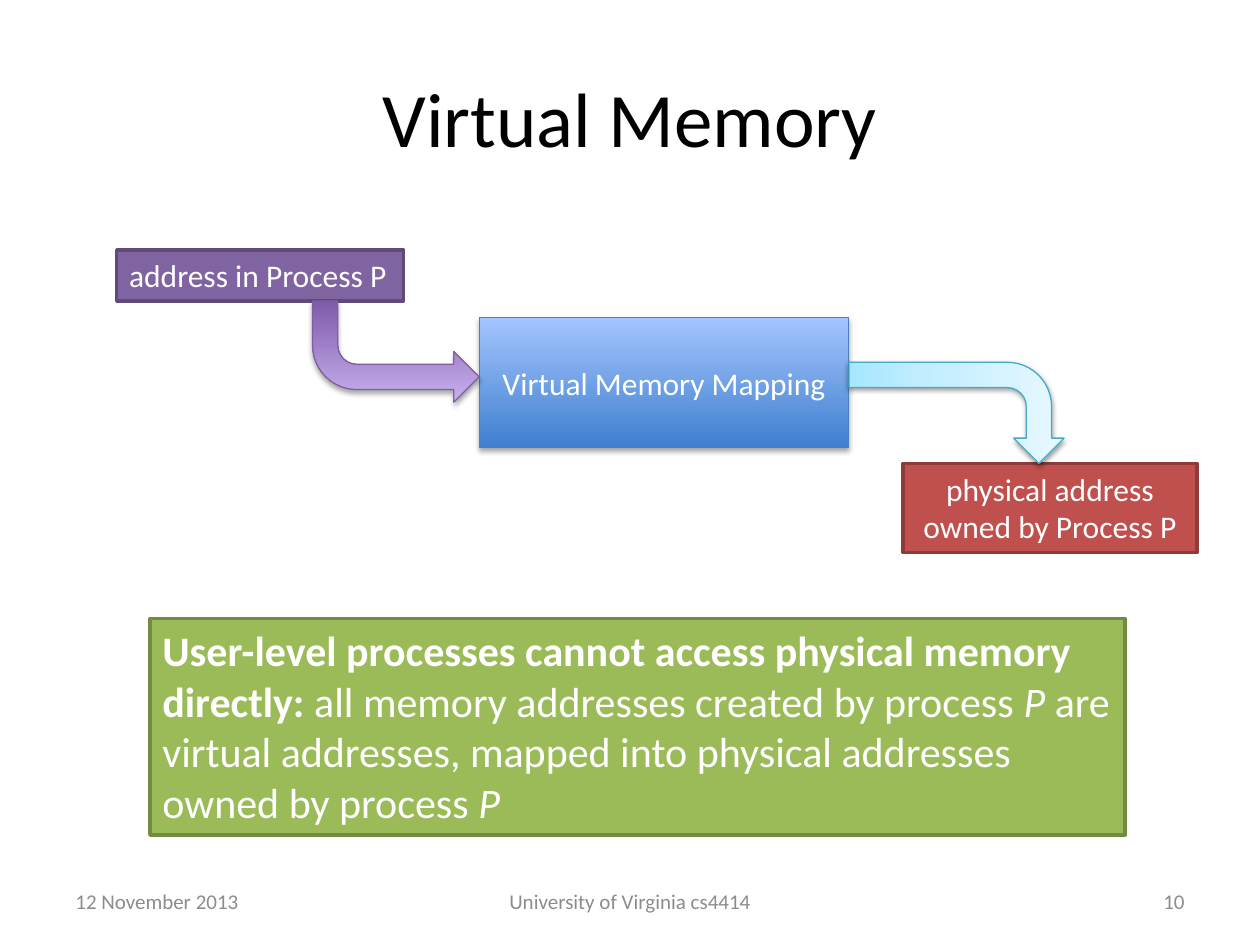
"""Build the Virtual Memory slide."""
from lxml import etree
from pptx import Presentation, util as u
from pptx.dml.color import RGBColor
from pptx.enum import shapes, text
from pptx.oxml.ns import qn

Pt = u.Pt
KIND = shapes.MSO_SHAPE
ALIGN = text.PP_ALIGN
ANCHOR = text.MSO_ANCHOR
FIT = text.MSO_AUTO_SIZE

BLACK = RGBColor(0x00, 0x00, 0x00)
WHITE = RGBColor(0xFF, 0xFF, 0xFF)
GRAY = RGBColor(0x8C, 0x8C, 0x8C)
PURPLE = RGBColor(0x80, 0x64, 0xA2)
PLUM = RGBColor(0x5F, 0x4A, 0x78)
RED = RGBColor(0xC0, 0x50, 0x4D)
BRICK = RGBColor(0x8E, 0x3B, 0x39)
GREEN = RGBColor(0x9B, 0xBB, 0x59)
OLIVE = RGBColor(0x73, 0x8A, 0x42)
BLUE = RGBColor(0x4B, 0x7E, 0xBC)
VIOLET = RGBColor(0x7D, 0x60, 0xA0)
TEAL = RGBColor(0x46, 0xAA, 0xC5)
BLUES = [(0, RGBColor(0x3F, 0x80, 0xCE)), (100, RGBColor(0xA4, 0xC4, 0xFF))]
LILACS = [(0, RGBColor(0x7F, 0x5B, 0xAB)), (100, RGBColor(0xC8, 0xB0, 0xED))]
AQUAS = [(0, RGBColor(0xA7, 0xE6, 0xFF)), (35, RGBColor(0xC1, 0xED, 0xFF)),
         (100, RGBColor(0xE7, 0xF8, 0xFF))]


def write(shape, runs, size=18, color=WHITE, align=ALIGN.LEFT,
          anchor=ANCHOR.TOP, wrap=True, fit=FIT.NONE):
    """Fill a shape with one paragraph of (words, style) runs."""
    frame = shape.text_frame
    frame.word_wrap = wrap
    frame.auto_size = fit
    frame.vertical_anchor = anchor
    para = frame.paragraphs[0]
    para.alignment = align
    for words, style in [(runs, "")] if isinstance(runs, str) else runs:
        run = para.add_run()
        run.text = words
        font = run.font
        font.name, font.size = "Calibri", Pt(size)
        font.color.rgb = color
        font.bold, font.italic = style == "bold", style == "italic"


def tint(parent, color, alpha=100):
    """Add an RGB colour with its opacity in percent."""
    node = etree.SubElement(parent, qn("a:srgbClr"), val=str(color))
    if alpha < 100:
        etree.SubElement(node, qn("a:alpha"), val=str(alpha * 1000))


def draw(slide, kind, area, fill, edge, width=2):
    """Add a flat outlined shape."""
    shape = slide.shapes.add_shape(kind, *map(Pt, area))
    shape.shadow.inherit = False
    if isinstance(fill, RGBColor):
        shape.fill.solid()
        shape.fill.fore_color.rgb = fill
    else:
        blend(shape, fill)
    shape.line.color.rgb = edge
    shape.line.width = Pt(width)
    return shape


def blend(shape, stops):
    """Fill a shape with a gradient running upwards."""
    shape.fill.gradient()
    shape.fill.gradient_angle = 90
    ramp = shape._element.spPr.find(".//" + qn("a:gsLst"))
    for stop in list(ramp):
        ramp.remove(stop)
    for place, color in stops:
        tint(etree.SubElement(ramp, qn("a:gs"), pos=str(place * 1000)), color)


def shade(shape, alpha=35, gap=1.8):
    """Drop a soft shadow straight below a shape."""
    effects = shape._element.spPr.find(qn("a:effectLst"))
    drop = etree.SubElement(effects, qn("a:outerShdw"), blurRad=str(Pt(3.1)),
                            dist=str(Pt(gap)), dir="5400000", rotWithShape="0")
    tint(drop, BLACK, alpha)


def bend(slide, area, fill, edge, turn, flip=False, **shadow):
    """Add a turned bent arrow."""
    arrow = draw(slide, KIND.BENT_ARROW, area, fill, edge, 0.75)
    arrow.rotation = turn
    if flip:
        arrow._element.spPr.find(qn("a:xfrm")).set("flipH", "1")
    shade(arrow, **shadow)


def foot(slide, left, width, words, align):
    """Add one footer entry."""
    box = slide.shapes.add_textbox(Pt(left), Pt(500.5), Pt(width), Pt(28.75))
    write(box, words, size=12, color=GRAY, align=align, anchor=ANCHOR.MIDDLE)


def main():
    """Build and save the slide."""
    deck = Presentation()
    deck.slide_width, deck.slide_height = Pt(720), Pt(540)
    slide = deck.slides.add_slide(deck.slide_layouts[5])

    title = slide.shapes.title
    title.left, title.top, title.width, title.height = map(
        Pt, (36, 21.6, 648, 90))
    write(title, "Virtual Memory", size=44, color=BLACK,
          align=ALIGN.CENTER, anchor=ANCHOR.MIDDLE)

    foot(slide, 36, 168, "12 November 2013", ALIGN.LEFT)
    foot(slide, 246, 228, "University of Virginia cs4414", ALIGN.CENTER)
    foot(slide, 516, 168, "10", ALIGN.RIGHT)

    source = draw(slide, KIND.RECTANGLE, (66.7, 142.8, 163.8, 29.1),
                  PURPLE, PLUM)
    write(source, "address in Process P", wrap=False, fit=FIT.SHAPE_TO_FIT_TEXT)

    mapper = draw(slide, KIND.RECTANGLE, (274, 181.5, 211, 74.2),
                  BLUES, BLUE, 0.75)
    shade(mapper)
    write(mapper, "Virtual Memory Mapping", align=ALIGN.CENTER,
          anchor=ANCHOR.MIDDLE)

    target = draw(slide, KIND.RECTANGLE, (516, 264.8, 168, 50.9), RED, BRICK)
    write(target, "physical address owned by Process P",
          align=ALIGN.CENTER, fit=FIT.SHAPE_TO_FIT_TEXT)

    bend(slide, (178.6, 172, 95.2, 57.8), LILACS, VIOLET, 180, flip=True)
    bend(slide, (517.7, 174.4, 57.8, 123), AQUAS, TEAL, 90, alpha=38, gap=1.6)

    note = draw(slide, KIND.RECTANGLE, (85.7, 353.5, 557.3, 123.7),
                GREEN, OLIVE)
    write(note, [
        ("User-level processes cannot access physical memory directly: ",
         "bold"),
        ("all memory addresses created by process ", ""),
        ("P", "italic"),
        (" are virtual addresses, mapped into physical addresses "
         "owned by process ", ""),
        ("P", "italic"),
    ], size=24, fit=FIT.SHAPE_TO_FIT_TEXT)

    deck.save("out.pptx")


if __name__ == "__main__":
    main()
